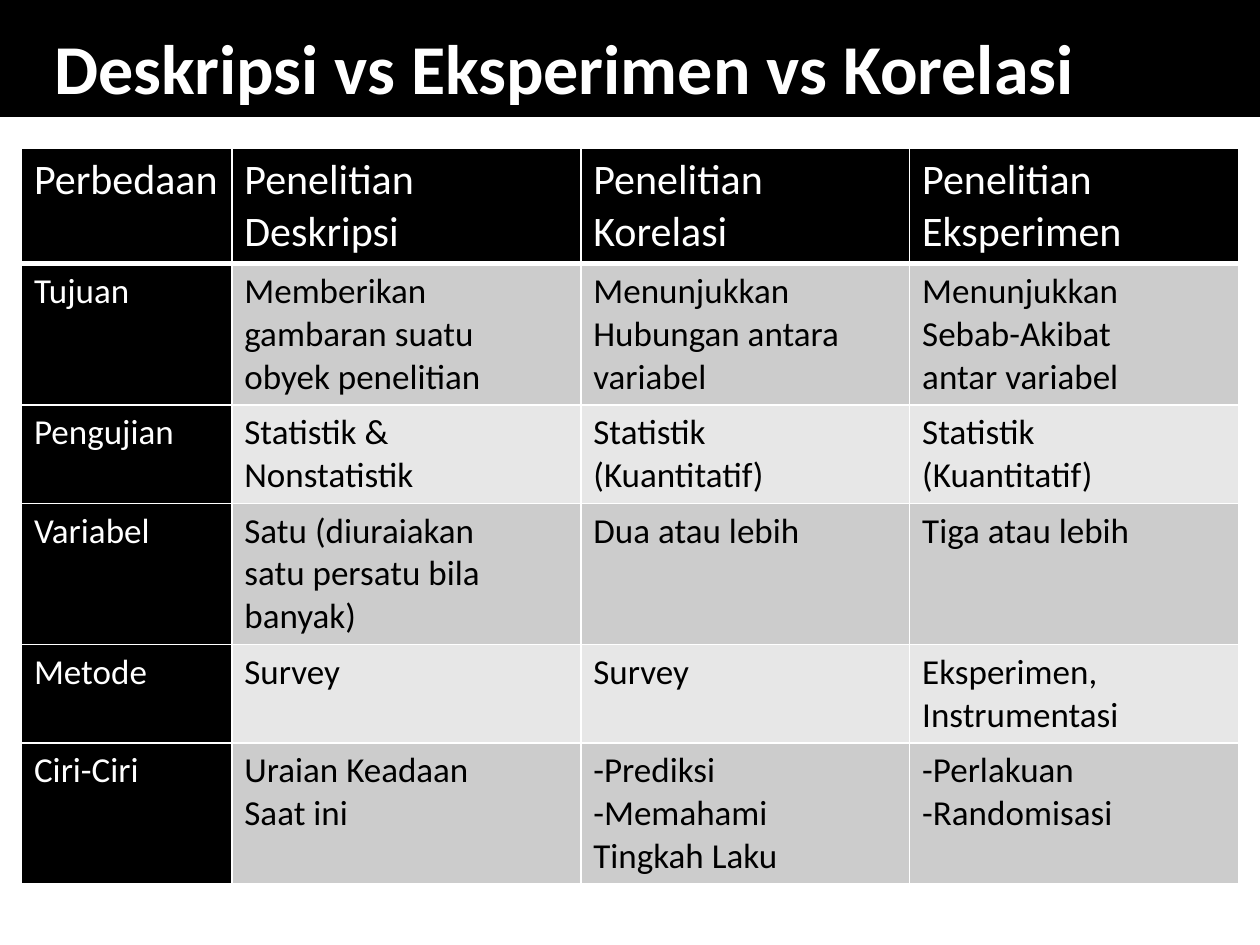
from lxml.etree import SubElement as Sub
from pptx import Presentation
from pptx.dml.color import RGBColor
from pptx.enum.shapes import MSO_SHAPE as Shape
from pptx.enum.text import MSO_ANCHOR as Anchor, MSO_AUTO_SIZE as Fit, PP_ALIGN as Align
from pptx.oxml.ns import qn
from pptx.util import Inches, Pt

BLACK, WHITE = "000000", "FFFFFF"
BANDS = ["CCCCCC", "E7E7E7"]
COLS = [1.67, 2.77, 2.61, 2.61]
ROWS = [0.77, 1.1, 0.77, 1.1, 0.77, 1.1]
CELLS = [
    ["Perbedaan", "Penelitian\nDeskripsi", "Penelitian\nKorelasi", "Penelitian\nEksperimen"],
    ["Tujuan", "Memberikan\ngambaran suatu\nobyek penelitian",
     "Menunjukkan\nHubungan antara\nvariabel", "Menunjukkan\nSebab-Akibat\nantar variabel"],
    ["Pengujian", "Statistik &\nNonstatistik", "Statistik\n(Kuantitatif)", "Statistik\n(Kuantitatif)"],
    ["Variabel", "Satu (diuraiakan\nsatu persatu bila\nbanyak)", "Dua atau lebih", "Tiga atau lebih"],
    ["Metode", "Survey", "Survey", "Eksperimen,\nInstrumentasi"],
    ["Ciri-Ciri", "Uraian Keadaan\nSaat ini", "-Prediksi\n-Memahami\nTingkah Laku",
     "-Perlakuan\n-Randomisasi"],
]


def color(code):
    return RGBColor.from_string(code)


def paint(item, code):
    item.fill.solid()
    item.fill.fore_color.rgb = color(code)


def write(frame, text, size, code, bold=False):
    for i, line in enumerate(text.split("\n")):
        para = frame.add_paragraph() if i else frame.paragraphs[0]
        para.alignment = Align.LEFT
        run = para.add_run()
        run.text = line
        font = run.font
        font.name, font.size, font.bold = "Calibri", Pt(size), bold
        font.color.rgb = color(code)


def edge(cell, side, width):
    line = Sub(cell._tc.get_or_add_tcPr(), qn("a:ln" + side), w=str(Pt(width)))
    fill = Sub(line, qn("a:solidFill"))
    Sub(fill, qn("a:srgbClr"), val=WHITE)


def add_title(slide):
    title = slide.shapes.title
    title.left, title.top = Inches(0.33), Inches(0.08)
    title.width, title.height = Inches(9.67), Inches(0.83)
    frame = title.text_frame
    frame.word_wrap = True
    frame.auto_size = Fit.NONE
    frame.vertical_anchor = Anchor.BOTTOM
    write(frame, "Deskripsi vs Eksperimen vs Korelasi", 40, WHITE, True)


def add_bar(slide):
    bar = slide.shapes.add_shape(Shape.RECTANGLE, 0, 0, Inches(10), Inches(0.92))
    bar.shadow.inherit = False
    paint(bar, BLACK)
    bar.line.color.rgb = color(BLACK)
    bar.line.width = Pt(1)
    slide.shapes.title.element.addprevious(bar.element)


def add_grid(slide):
    grid = slide.shapes.add_table(
        len(ROWS), len(COLS), Inches(0.17), Inches(1.18), Inches(9.67), Inches(5.74)).table
    grid.first_col = True
    for col, width in zip(grid.columns, COLS):
        col.width = Inches(width)
    for r, (row, high) in enumerate(zip(grid.rows, ROWS)):
        row.height = Inches(high)
        for c, cell in enumerate(row.cells):
            head = r == 0 or c == 0
            for side in "LRTB":
                thick = (r, side) in [(0, "B"), (1, "T")]
                edge(cell, side, 3 if thick else 1)
            paint(cell, BLACK if head else BANDS[(r - 1) % 2])
            write(cell.text_frame, CELLS[r][c], 20 if r else 24, WHITE if head else BLACK)


def main():
    deck = Presentation()
    deck.slide_width, deck.slide_height = Inches(10), Inches(7.5)
    slide = deck.slides.add_slide(deck.slide_layouts[5])
    paint(slide.background, WHITE)
    add_title(slide)
    add_bar(slide)
    add_grid(slide)
    deck.save("out.pptx")


if __name__ == "__main__":
    main()
